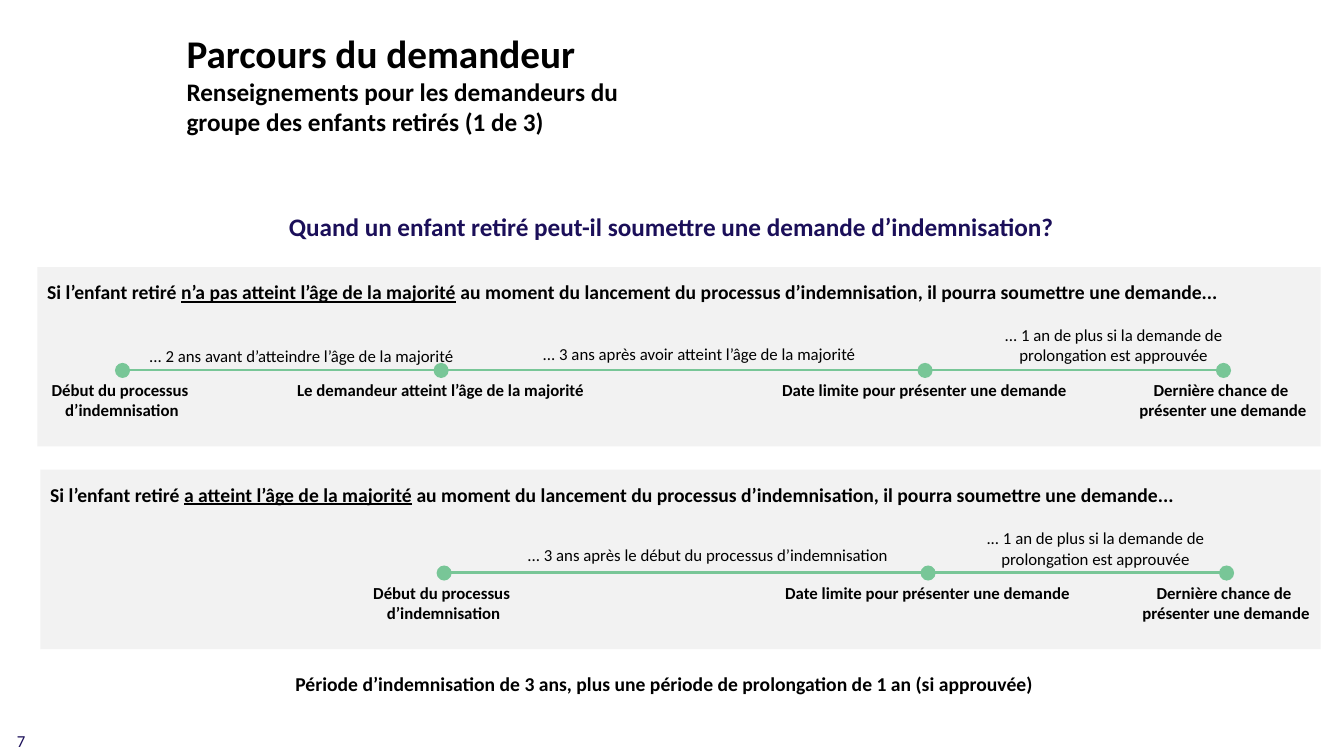
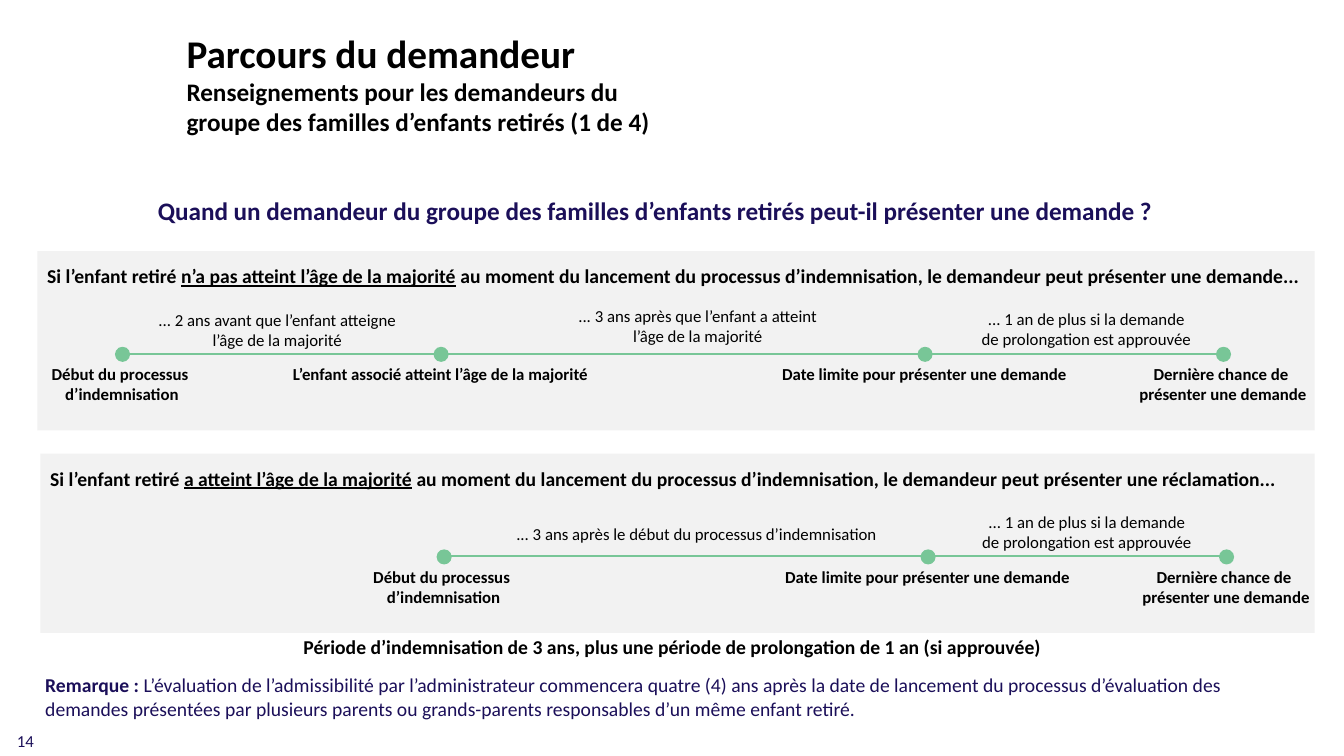
from dataclasses import dataclass
from typing import NamedTuple

import pptx
import pptx.dml.color
import pptx.enum.shapes
import pptx.enum.text
import pptx.oxml.ns
import pptx.util
from lxml import etree

EMU_PER_PX = 9144  # 100 px to the inch
FONT = "Calibri"
COLORS = {"text": "000000", "accent": "1B0F59", "panel": "F2F2F2", "track": "78C697"}
ALIGN = pptx.enum.text.PP_ALIGN
ANCHOR = pptx.enum.text.MSO_ANCHOR
SHAPE = pptx.enum.shapes.MSO_SHAPE

PANEL_HEIGHT = 178
TRACK_DROP = 102
DOT_SIZE = 15
LABEL_WIDTH, WIDE_LABEL_WIDTH = 200, 340

OPENING = "Si l’enfant retiré "
LAUNCH = " au moment du lancement du processus d’indemnisation, "
MINOR = "n’a pas atteint l’âge de la majorité"
ADULT = "a atteint l’âge de la majorité"
START = "Début du processus \nd’indemnisation"
DEADLINE = "Date limite pour présenter une demande"
LAST_CHANCE = "Dernière chance de \nprésenter une demande"
AFTER_START = "... 3 ans après le début du processus d’indemnisation"
EXTENSION = "... 1 an de plus si la demande de prolongation est approuvée"
SUMMARY = "Période d’indemnisation de 3 ans, plus une période de prolongation de 1 an (si approuvée)"


class Box(NamedTuple):
    left: int
    top: int
    width: int
    height: int

    def emu(self) -> list[int]:
        return [value * EMU_PER_PX for value in self]


class Span(NamedTuple):
    text: str
    bold: bool = False
    underline: bool = False


class Milestone(NamedTuple):
    offset: int  # from the left of the panel
    label: str


class Period(NamedTuple):
    text: str
    box: Box


@dataclass
class Panel:
    left: int
    top: int
    right: int
    condition: str
    outcome: str
    milestones: list[Milestone]
    periods: list[Period]


@dataclass
class Page:
    number: str
    subtitle: str
    title_width: int
    question: str
    question_box: Box
    panels: list[Panel]
    summary_box: Box
    note: list[Span]


def milestones(first: list[Milestone]) -> list[Milestone]:
    return first + [Milestone(880, DEADLINE), Milestone(1176, LAST_CHANCE)]


PAGES = [
    Page(
        "7",
        "Renseignements pour les demandeurs du groupe des enfants retirés (1 de 3)",
        464,
        "Quand un enfant retiré peut-il soumettre une demande d’indemnisation?",
        Box(258, 205, 816, 40),
        [
            Panel(
                37, 265, 1310, MINOR, "il pourra soumettre une demande...",
                milestones([Milestone(84, START),
                            Milestone(400, "Le demandeur atteint l’âge de la majorité")]),
                [Period("... 2 ans avant d’atteindre l’âge de la majorité", Box(131, 338, 336, 30)),
                 Period("... 3 ans après avoir atteint l’âge de la majorité", Box(517, 336, 353, 30)),
                 Period(EXTENSION, Box(962, 317, 285, 50))],
            ),
            Panel(
                40, 466, 1310, ADULT, "il pourra soumettre une demande...",
                milestones([Milestone(400, START)]),
                [Period(AFTER_START, Box(508, 536, 388, 30)),
                 Period(EXTENSION, Box(964, 519, 245, 50))],
            ),
        ],
        Box(204, 662, 910, 34),
        [],
    ),
    Page(
        "14",
        "Renseignements pour les demandeurs du groupe des familles d’enfants retirés (1 de 4)",
        491,
        "Quand un demandeur du groupe des familles d’enfants retirés peut-il présenter une demande ?",
        Box(34, 189, 1232, 40),
        [
            Panel(
                37, 249, 1304, MINOR, "le demandeur peut présenter une demande...",
                milestones([Milestone(84, START),
                            Milestone(400, "L’enfant associé atteint l’âge de la majorité")]),
                [Period("... 2 ans avant que l’enfant atteigne l’âge de la majorité",
                        Box(131, 302, 288, 50)),
                 Period("... 3 ans après que l’enfant a atteint l’âge de la majorité",
                        Box(548, 298, 288, 50)),
                 Period(EXTENSION, Box(962, 301, 231, 50))],
            ),
            Panel(
                40, 450, 1304, ADULT, "le demandeur peut présenter une réclamation...",
                milestones([Milestone(400, START)]),
                [Period(AFTER_START, Box(496, 515, 390, 30)),
                 Period(EXTENSION, Box(964, 503, 228, 50))],
            ),
        ],
        Box(212, 625, 910, 34),
        [
            Span("Remarque :", bold=True),
            Span(" L’évaluation de l’admissibilité par l’administrateur commencera quatre (4) ans "
                 "après la date de lancement du processus d’évaluation des demandes présentées par "
                 "plusieurs parents ou grands-parents responsables d’un même enfant retiré."),
        ],
    ),
]


def rgb(name: str) -> pptx.dml.color.RGBColor:
    return pptx.dml.color.RGBColor.from_string(COLORS[name])


def add_span(para, text: str, *, size: int, bold: bool = False,
             underline: bool = False, color: str = "text") -> None:
    """Append formatted text; a newline becomes a line break."""
    for index, line in enumerate(text.split("\n")):
        if index:
            para.add_line_break()
        span = para.add_run()
        span.text = line
        font = span.font
        font.name, font.size = FONT, pptx.util.Pt(size)
        font.bold, font.underline = bold, underline
        font.color.rgb = rgb(color)


def add_text(page, box: Box, spans: list[Span], *, size: int, color: str = "text",
             align=ALIGN.LEFT, anchor=ANCHOR.TOP) -> None:
    frame = page.shapes.add_textbox(*box.emu()).text_frame
    frame.word_wrap = True
    frame.vertical_anchor = anchor
    para = frame.paragraphs[0]
    para.alignment = align
    for span in spans:
        add_span(para, span.text, size=size, bold=span.bold,
                 underline=span.underline, color=color)


def add_filled(page, kind, box: Box, color: str) -> None:
    shape = page.shapes.add_shape(kind, *box.emu())
    shape.shadow.inherit = False
    shape.fill.solid()
    shape.fill.fore_color.rgb = rgb(color)
    shape.line.fill.background()


def add_track(page, start: int, end: int, y: int) -> None:
    line = page.shapes.add_connector(
        pptx.enum.shapes.MSO_CONNECTOR.STRAIGHT,
        *[value * EMU_PER_PX for value in (start, y, end, y)])
    line.line.color.rgb = rgb("track")
    line.line.width = pptx.util.Pt(1.5)
    etree.SubElement(line._element.spPr, pptx.oxml.ns.qn("a:effectLst"))


def add_milestone(page, x: int, y: int, label: str) -> None:
    add_filled(page, SHAPE.OVAL,
               Box(x - DOT_SIZE // 2, y - DOT_SIZE // 2, DOT_SIZE, DOT_SIZE), "track")
    width = LABEL_WIDTH if "\n" in label else WIDE_LABEL_WIDTH
    add_text(page, Box(x - width // 2, y + 5, width, 50), [Span(label, bold=True)],
             size=12, align=ALIGN.CENTER)


def add_panel(page, panel: Panel) -> None:
    add_filled(page, SHAPE.RECTANGLE,
               Box(panel.left, panel.top, panel.right - panel.left, PANEL_HEIGHT), "panel")
    add_text(page, Box(panel.left, panel.top + 8, 1290, 34),
             [Span(OPENING, bold=True),
              Span(panel.condition, bold=True, underline=True),
              Span(LAUNCH + panel.outcome, bold=True)], size=14)
    y = panel.top + TRACK_DROP
    stops = [panel.left + stop.offset for stop in panel.milestones]
    add_track(page, stops[0], stops[-1], y)
    for x, stop in zip(stops, panel.milestones):
        add_milestone(page, x, y, stop.label)
    for period in panel.periods:
        add_text(page, period.box, [Span(period.text)], size=12, align=ALIGN.CENTER)


def set_title(page, subtitle: str, width: int) -> None:
    title = page.shapes.title
    title.left, title.top, title.width, title.height = Box(175, 23, width, 118).emu()
    frame = title.text_frame
    frame.word_wrap = True
    frame.auto_size = pptx.enum.text.MSO_AUTO_SIZE.NONE
    frame.vertical_anchor = ANCHOR.MIDDLE
    for para, text, size in (
        (frame.paragraphs[0], "Parcours du demandeur", 28),
        (frame.add_paragraph(), subtitle, 18),
    ):
        para.alignment = ALIGN.LEFT
        add_span(para, text, size=size, bold=True)


def add_page(deck, content: Page) -> None:
    page = deck.slides.add_slide(deck.slide_layouts.get_by_name("Title Only"))
    set_title(page, content.subtitle, content.title_width)
    add_text(page, content.question_box, [Span(content.question, bold=True)],
             size=18, color="accent", align=ALIGN.CENTER)
    for panel in content.panels:
        add_panel(page, panel)
    add_text(page, content.summary_box, [Span(SUMMARY, bold=True)],
             size=14, align=ALIGN.CENTER)
    if content.note:
        add_text(page, Box(35, 663, 1261, 57), content.note, size=14, color="accent")
    add_text(page, Box(7, 720, 300, 30), [Span(content.number)],
             size=12, color="accent", anchor=ANCHOR.MIDDLE)


def main() -> None:
    deck = pptx.Presentation()
    deck.slide_width, deck.slide_height = 1333 * EMU_PER_PX, 750 * EMU_PER_PX
    for content in PAGES:
        add_page(deck, content)
    deck.save("out.pptx")


if __name__ == "__main__":
    main()
